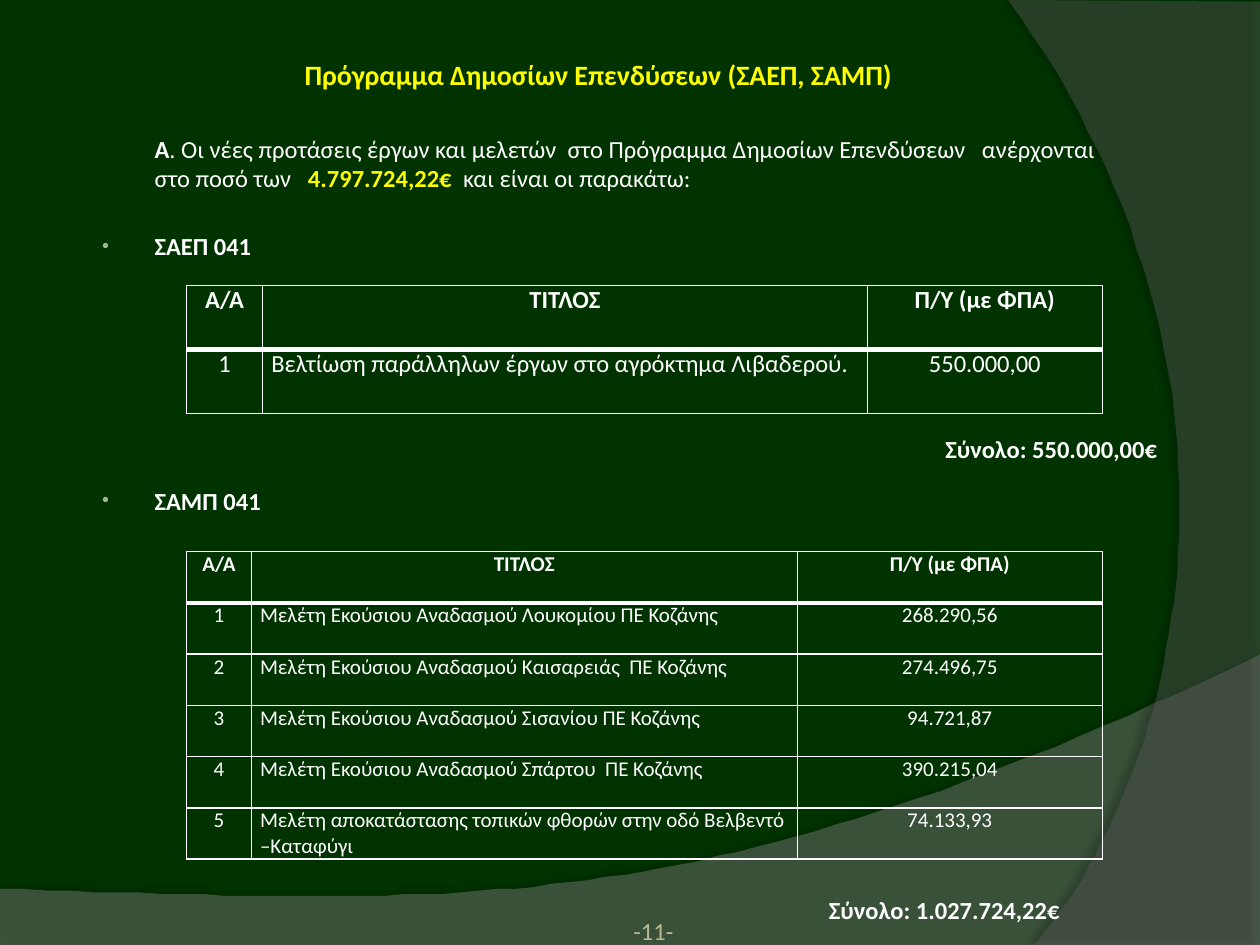
from lxml import etree
from pptx import Presentation
from pptx.dml.color import RGBColor
from pptx.enum.text import MSO_ANCHOR, PP_ALIGN
from pptx.oxml.ns import qn
from pptx.util import Pt

LEFT, CENTER, RIGHT = PP_ALIGN.LEFT, PP_ALIGN.CENTER, PP_ALIGN.RIGHT
TOP, MIDDLE, BOTTOM = MSO_ANCHOR.TOP, MSO_ANCHOR.MIDDLE, MSO_ANCHOR.BOTTOM
WHITE, YELLOW, GREEN = "FFFFFF", "FFFF00", "003300"
BULLET, PAGE_NUMBER = "A5B592", "BCB995"
HEADER = ["Α/Α", "ΤΙΤΛΟΣ", "Π/Υ (με ΦΠΑ)"]
WORKS = [("Βελτίωση παράλληλων έργων στο αγρόκτημα Λιβαδερού.", "550.000,00")]
STUDIES = [
    ("Μελέτη Εκούσιου Αναδασμού Λουκομίου ΠΕ Κοζάνης", "268.290,56"),
    ("Μελέτη Εκούσιου Αναδασμού Καισαρειάς  ΠΕ Κοζάνης", "274.496,75"),
    ("Μελέτη Εκούσιου Αναδασμού Σισανίου ΠΕ Κοζάνης", "94.721,87"),
    ("Μελέτη Εκούσιου Αναδασμού Σπάρτου  ΠΕ Κοζάνης", "390.215,04"),
    ("Μελέτη αποκατάστασης τοπικών φθορών στην οδό Βελβεντό –Καταφύγι", "74.133,93"),
]
INTRO = [
    ("Α", True, WHITE),
    (". Οι νέες προτάσεις έργων και μελετών  στο Πρόγραμμα Δημοσίων Επενδύσεων   "
     "ανέρχονται στο ποσό των   ", False, WHITE),
    ("4.797.724,22€", True, YELLOW),
    ("  και είναι οι παρακάτω:", False, WHITE),
]


def rgb(color):
    """Turn a hex string into a colour."""
    return RGBColor.from_string(color)


def add_xml(parent, tag, **attributes):
    """Append a drawing element with its attributes."""
    return etree.SubElement(parent, qn(f"a:{tag}"),
                            {name: str(value) for name, value in attributes.items()})


def style(paragraph, size, color=WHITE, bold=False, align=LEFT):
    """Set the font and alignment of a paragraph."""
    paragraph.alignment = align
    font = paragraph.font
    font.name, font.size, font.bold = "Calibri", Pt(size), bold
    font.color.rgb = rgb(color)


def curve(start, first, second, end, steps=60):
    """Return points along a cubic curve."""
    points = []
    for step in range(steps + 1):
        t = step / steps
        weights = ((1 - t) ** 3, 3 * t * (1 - t) ** 2, 3 * t * t * (1 - t), t ** 3)
        points.append(tuple(sum(w * p[axis] for w, p in zip(weights, (start, first, second, end)))
                            for axis in (0, 1)))
    return points


def add_swoosh(slide, points, color, opacity, shadow_opacity, distance, direction):
    """Draw a translucent curved area with a soft shadow."""
    builder = slide.shapes.build_freeform(*points[0], scale=Pt(1))
    builder.add_line_segments(points[1:], close=True)
    swoosh = builder.convert_to_shape()
    swoosh.fill.solid()
    swoosh.fill.fore_color.rgb = rgb(color)
    swoosh.line.fill.background()
    swoosh.shadow.inherit = False
    properties = swoosh.element.spPr
    add_xml(properties.find(f"{qn('a:solidFill')}/{qn('a:srgbClr')}"), "alpha", val=opacity * 1000)
    shadow = add_xml(properties.find(qn("a:effectLst")), "outerShdw", blurRad=Pt(4),
                     dist=Pt(distance), dir=direction * 60000, algn="ctr", rotWithShape=0)
    add_xml(add_xml(shadow, "srgbClr", val="000000"), "alpha", val=shadow_opacity * 1000)


def place(shape, left, top, width, height):
    """Set the position and size of a shape in points."""
    shape.left, shape.top, shape.width, shape.height = map(Pt, (left, top, width, height))


def add_title(slide, wording):
    """Fill and format the title placeholder."""
    title = slide.shapes.title
    place(title, 48, 28, 588, 29)
    title.text_frame.text = wording
    title.text_frame.vertical_anchor = MIDDLE
    style(title.text_frame.paragraphs[0], 16, YELLOW, True, CENTER)


def add_box(slide, left, top, width, height, anchor=TOP):
    """Add a wrapping text box and return its text frame."""
    frame = slide.shapes.add_textbox(*map(Pt, (left, top, width, height))).text_frame
    frame.word_wrap = True
    frame.vertical_anchor = anchor
    return frame


def add_label(slide, box, wording, anchor, align=LEFT, color=WHITE, bold=True):
    """Add a single line of text."""
    frame = add_box(slide, *box, anchor)
    frame.text = wording
    style(frame.paragraphs[0], 14, color, bold, align)
    return frame


def add_heading(frame, wording, gap):
    """Add a bulleted heading below a gap."""
    heading = frame.add_paragraph()
    heading.text = wording
    heading.space_before = Pt(gap)
    properties = heading._p.get_or_add_pPr()
    properties.set("marL", str(Pt(33)))
    properties.set("indent", str(Pt(-30)))
    add_xml(add_xml(properties, "buClr"), "srgbClr", val=BULLET)
    add_xml(properties, "buSzPct", val=80000)
    add_xml(properties, "buFont", typeface="Arial")
    add_xml(properties, "buChar", char="•")
    style(heading, 14, bold=True)


def add_body(slide):
    """Add the introduction and the two section headings."""
    frame = add_box(slide, 48.24, 73, 588, 230)
    intro = frame.paragraphs[0]
    intro._p.get_or_add_pPr().set("marL", str(Pt(33)))
    style(intro, 14)
    for wording, bold, color in INTRO:
        run = intro.add_run()
        run.text = wording
        run.font.bold = bold
        run.font.color.rgb = rgb(color)
    add_heading(frame, "ΣΑΕΠ 041", 21.8)
    add_heading(frame, "ΣΑΜΠ 041", 128.7)


def add_borders(cell, top, bottom):
    """Draw the white borders of a cell."""
    properties = cell._tc.get_or_add_tcPr()
    for side, width in (("L", 1), ("R", 1), ("T", top), ("B", bottom)):
        line = add_xml(properties, f"ln{side}", w=Pt(width))
        add_xml(add_xml(line, "solidFill"), "srgbClr", val=WHITE)


def add_budget(slide, top, widths, row_height, size, projects):
    """Add a numbered table of projects and their budgets."""
    rows = [HEADER] + [(str(number), *project) for number, project in enumerate(projects, 1)]
    table = slide.shapes.add_table(len(rows), len(widths), Pt(106.6), Pt(top), Pt(sum(widths)),
                                   Pt(row_height * len(rows))).table
    table.horz_banding = table.first_row = False
    for column, width in zip(table.columns, widths):
        column.width = Pt(width)
    for r, row in enumerate(rows):
        table.rows[r].height = Pt(row_height)
        for c, wording in enumerate(row):
            cell = table.cell(r, c)
            cell.text = wording
            cell.margin_left = cell.margin_right = Pt(5)
            cell.margin_top = cell.margin_bottom = 0
            add_borders(cell, 3 if r == 1 else 1, 3 if r == 0 else 1)
            cell.fill.background()
            style(cell.text_frame.paragraphs[0], size, bold=r == 0,
                  align=LEFT if r and c == 1 else CENTER)


def main():
    """Build the slide and save it."""
    deck = Presentation()
    deck.slide_width, deck.slide_height = Pt(720), Pt(540)
    slide = deck.slides.add_slide(deck.slide_layouts[5])
    slide.background.fill.solid()
    slide.background.fill.fore_color.rgb = rgb(GREEN)

    lower_edge = curve((720, 374.4), (402.5, 524.9), (281.5, 517.7), (0, 507.6))
    add_swoosh(slide, [(0, 540), (720, 540)] + lower_edge, "7F7F7F", 45, 35, 3.5, 270)
    right_edge = curve((591, 540), (673.2, 445.7), (733, 216), (576, 0))
    add_swoosh(slide, [(720, 1.4), (720, 540)] + right_edge, "5E5E5E", 40, 45, 4, 180)

    add_title(slide, "Πρόγραμμα Δημοσίων Επενδύσεων (ΣΑΕΠ, ΣΑΜΠ)")
    add_body(slide)
    add_budget(slide, 163.2, (43.5, 345.6, 134.2), 36.6, 14, WORKS)
    add_label(slide, (410.4, 231, 258, 37.4), "Σύνολο: 550.000,00€", BOTTOM, RIGHT)
    add_budget(slide, 315.2, (37, 312, 174.3), 29.3, 12, STUDIES)
    add_label(slide, (466.6, 501, 150, 38), "Σύνολο: 1.027.724,22€", MIDDLE)
    page = add_label(slide, (343.4, 511, 60, 29), "-11-", BOTTOM, CENTER, PAGE_NUMBER, False)
    page.margin_left = page.margin_right = page.margin_top = page.margin_bottom = 0
    deck.save("out.pptx")


if __name__ == "__main__":
    main()
